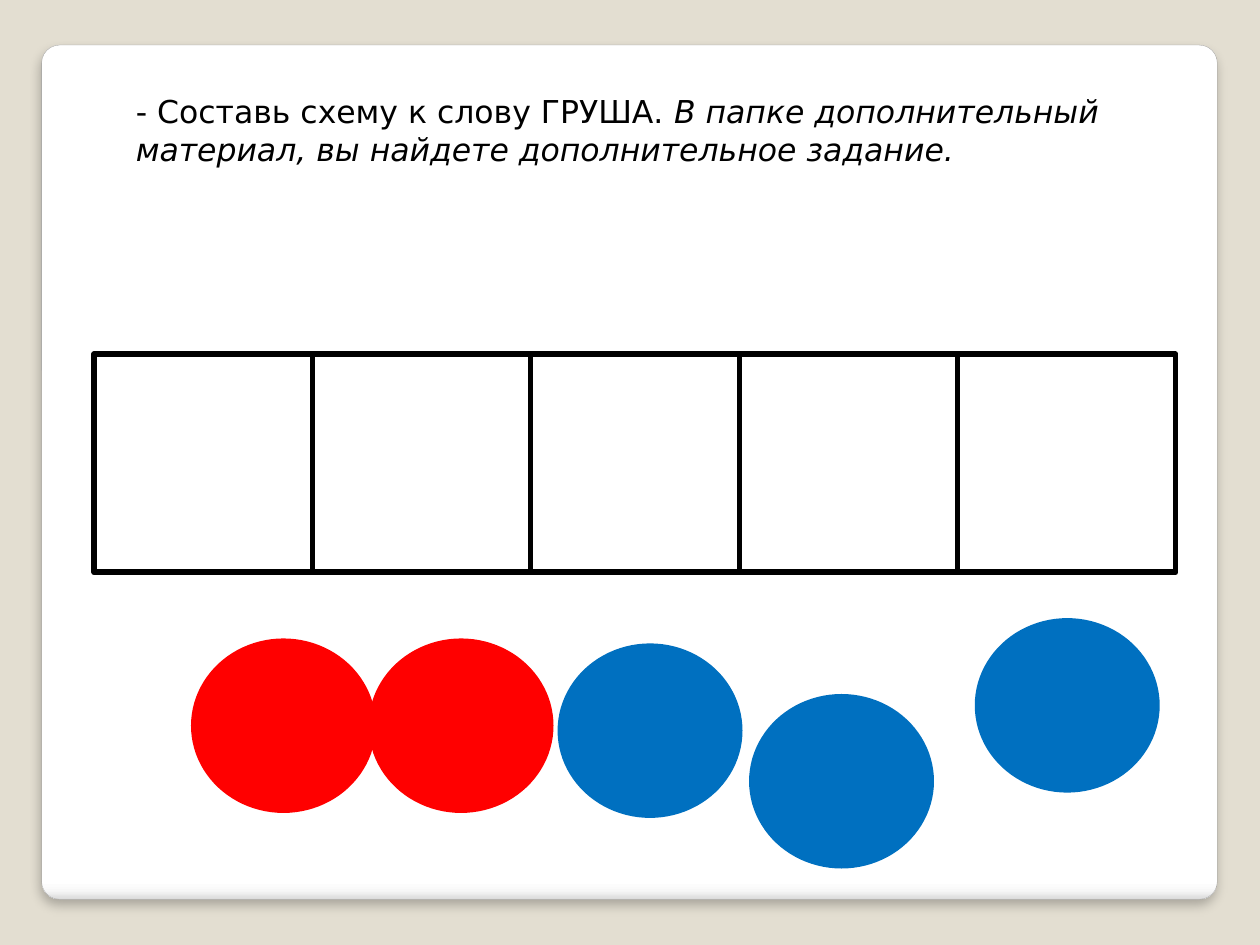
from typing import Any, NamedTuple

from lxml import etree
from pptx import Presentation
from pptx.dml.color import RGBColor
from pptx.enum.shapes import MSO_CONNECTOR, MSO_SHAPE
from pptx.enum.text import MSO_AUTO_SIZE
from pptx.oxml.ns import qn
from pptx.util import Cm, Pt

ROUND = MSO_SHAPE.ROUNDED_RECTANGLE
RECT = MSO_SHAPE.RECTANGLE
OVAL = MSO_SHAPE.OVAL
LINE = MSO_CONNECTOR.STRAIGHT
GROW = MSO_AUTO_SIZE.SHAPE_TO_FIT_TEXT

SAND = RGBColor(0xE3, 0xDE, 0xD1)
WHITE = RGBColor(0xFF, 0xFF, 0xFF)
BLACK = RGBColor(0x00, 0x00, 0x00)
GRAY = RGBColor(0xA4, 0xA4, 0xA4)
RED = RGBColor(0xFF, 0x00, 0x00)
BLUE = RGBColor(0x00, 0x70, 0xC0)

FONT = "DejaVu Sans"
EDGE = 3.35
STOPS = ((0, "FFFFFF"), (98, "FFFFFF"), (99, "F7F7F7"), (100, "DADADA"))


class Box(NamedTuple):
    left: float
    top: float
    width: float
    height: float


class Disc(NamedTuple):
    left: float
    top: float
    color: RGBColor


PANEL = Box(0.84, 0.91, 23.7, 17.22)
TASK = Box(2.49, 1.73, 21.21, 1.8)
FRAME = Box(1.9, 7.14, 21.8, 4.4)
WALLS = (6.3, 10.69, 14.91, 19.3)
SIZE = (3.61, 3.4)
DISCS = (
    Disc(3.91, 12.93, RED),
    Disc(7.49, 12.93, RED),
    Disc(11.3, 13.03, BLUE),
    Disc(15.16, 14.05, BLUE),
    Disc(19.71, 12.52, BLUE),
)


def add_node(root: Any, tag: str, **attrs: str) -> Any:
    return etree.SubElement(root, qn(tag), attrs)


def draw_shape(slide: Any, kind: Any, box: Box, fill: RGBColor,
               edge: RGBColor, width: float) -> Any:
    shape = slide.shapes.add_shape(kind, *map(Cm, box))
    shape.fill.solid()
    shape.fill.fore_color.rgb = fill
    shape.line.color.rgb = edge
    shape.line.width = Pt(width)
    shape.shadow.inherit = False
    return shape


def draw_panel(slide: Any) -> None:
    panel = draw_shape(slide, ROUND, PANEL, WHITE, GRAY, 0.16)
    panel.adjustments[0] = 0.021
    panel.fill.gradient()
    panel.fill.gradient_angle = 270
    props = panel._element.spPr
    stops = props.find(".//" + qn("a:gsLst"))
    stops.clear()
    for place, color in STOPS:
        stop = add_node(stops, "a:gs", pos=str(place * 1000))
        add_node(stop, "a:srgbClr", val=color)
    shade = add_node(props.find(qn("a:effectLst")), "a:outerShdw",
                     blurRad=str(Pt(6)), dist=str(Pt(4)), dir="5400000",
                     algn="tl", rotWithShape="0")
    tint = add_node(shade, "a:srgbClr", val=str(BLACK))
    add_node(tint, "a:alpha", val="25000")


def draw_task(slide: Any) -> None:
    frame = slide.shapes.add_textbox(*map(Cm, TASK)).text_frame
    frame.word_wrap = True
    frame.auto_size = GROW
    para = frame.paragraphs[0]
    para.font.name = FONT
    para.font.size = Pt(18)
    para.font.color.rgb = BLACK
    para.add_run().text = "- Составь схему к слову ГРУША. "
    hint = para.add_run()
    hint.text = "В папке дополнительный материал, вы найдете дополнительное задание."
    hint.font.italic = True


def draw_wall(slide: Any, left: float) -> None:
    ends = (left, FRAME.top, left, FRAME.top + FRAME.height)
    wall = slide.shapes.add_connector(LINE, *map(Cm, ends))
    wall.line.color.rgb = BLACK
    wall.line.width = Pt(3)
    add_node(wall._element.spPr, "a:effectLst")


def main() -> None:
    """Build the word scheme slide with five cells and five sound discs."""
    deck = Presentation()
    deck.slide_width, deck.slide_height = Cm(25.4), Cm(19.05)
    slide = deck.slides.add_slide(deck.slide_layouts[6])
    back = slide.background.fill
    back.solid()
    back.fore_color.rgb = SAND
    draw_panel(slide)
    draw_task(slide)
    draw_shape(slide, RECT, FRAME, WHITE, BLACK, EDGE)
    for left in WALLS:
        draw_wall(slide, left)
    for disc in DISCS:
        box = Box(disc.left, disc.top, *SIZE)
        draw_shape(slide, OVAL, box, disc.color, disc.color, EDGE)
    deck.save("out.pptx")


if __name__ == "__main__":
    main()
